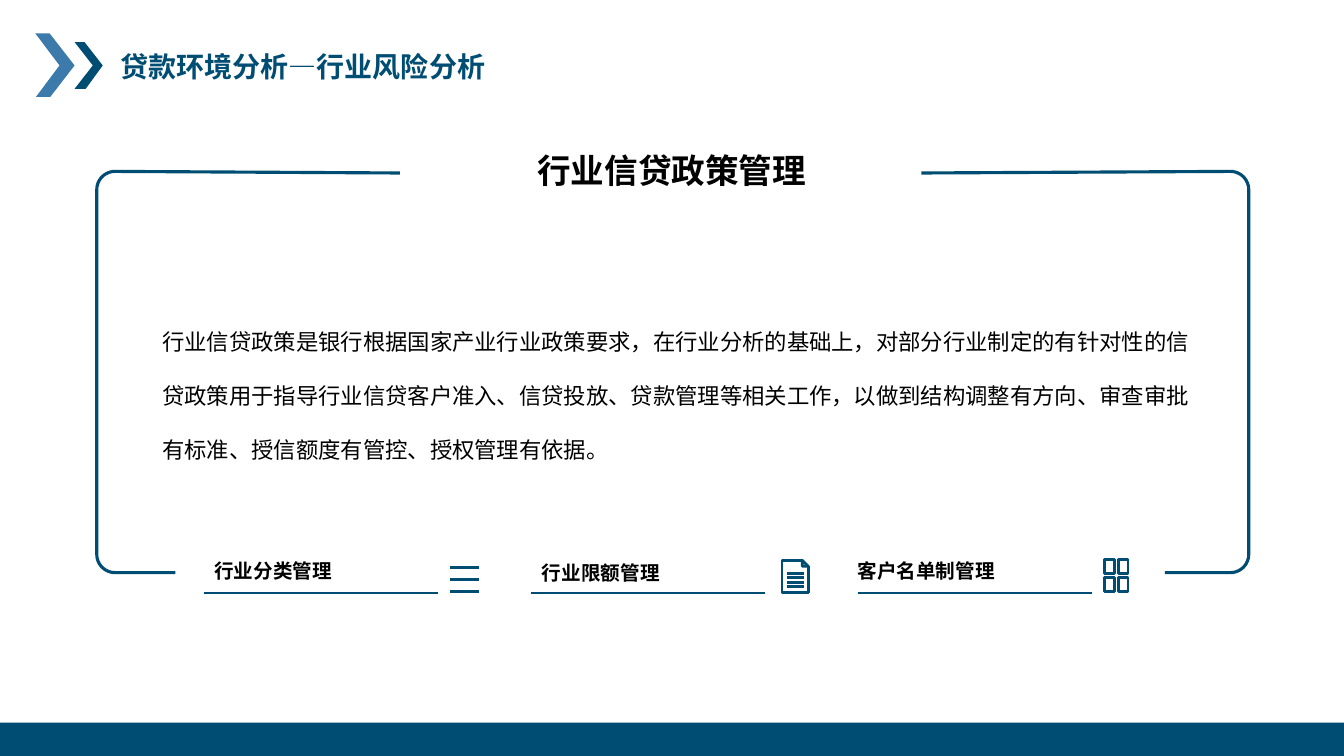
from math import cos, pi, sin

from lxml.etree import SubElement
from pptx import Presentation
from pptx.dml.color import RGBColor
from pptx.enum.shapes import MSO_CONNECTOR, MSO_SHAPE
from pptx.enum.text import PP_ALIGN
from pptx.oxml.ns import qn
from pptx.util import Cm, Pt

# Content
TITLE = "贷款环境分析—行业风险分析"
HEADING = "行业信贷政策管理"
BODY = ("行业信贷政策是银行根据国家产业行业政策要求，在行业分析的基础上，"
        "对部分行业制定的有针对性的信贷政策用于指导行业信贷客户准入、信贷投放、"
        "贷款管理等相关工作，以做到结构调整有方向、审查审批有标准、"
        "授信额度有管控、授权管理有依据。")
# Label, left, top, width, alignment
MEASURES = [
    ("行业分类管理", 5.13, 13.97, 3.51, PP_ALIGN.CENTER),
    ("行业限额管理", 13.39, 14.0, 3.51, PP_ALIGN.CENTER),
    ("客户名单制管理", 21.36, 13.97, 4.01, PP_ALIGN.LEFT),
]

# Style, lengths in cm
FONT = "Noto Sans CJK SC"
NAVY = RGBColor(0x00, 0x4D, 0x73)
BLUE = RGBColor(0x3C, 0x7A, 0xAB)
BLACK = RGBColor(0x00, 0x00, 0x00)
SLIDE_W, SLIDE_H, BAR_H = 33.87, 19.05, 0.84
CHEVRONS = [
    (BLUE, [(0.89, 0.84), (1.25, 0.84), (1.88, 1.65), (1.27, 2.44),
            (0.91, 2.44), (1.5, 1.65)]),
    (NAVY, [(1.88, 1.06), (2.13, 1.06), (2.59, 1.65), (2.16, 2.24),
            (1.88, 2.24), (2.34, 1.65)]),
]
FRAME_TOP, FRAME_BOTTOM, FRAME_R = 4.32, 14.43, 0.46
# Side x, direction inwards, end of bottom edge, end of top edge
FRAME_SIDES = [(2.44, 1, 4.42, 10.08), (31.47, -1, 29.36, 23.22)]
RULE_X, RULE_Y, RULE_W, RULE_PITCH = 5.13, 14.94, 5.9, 8.24

prs = Presentation()
prs.slide_width, prs.slide_height = Cm(SLIDE_W), Cm(SLIDE_H)
s = prs.slides.add_slide(prs.slide_layouts[6])


def paint(sp, fill=None, line=None, width=2):
    sp.shadow.inherit = False
    if fill is None:
        sp.fill.background()
    else:
        sp.fill.solid()
        sp.fill.fore_color.rgb = fill
    if line is None:
        sp.line.fill.background()
    else:
        sp.line.color.rgb = line
        sp.line.width = Pt(width)


def add_rect(x, y, w, h, **style):
    sp = s.shapes.add_shape(MSO_SHAPE.RECTANGLE, Cm(x), Cm(y), Cm(w), Cm(h))
    paint(sp, **style)


def add_path(points, close=False, **style):
    pts = [(Cm(x), Cm(y)) for x, y in points]
    fb = s.shapes.build_freeform(*pts[0])
    fb.add_line_segments(pts[1:], close=close)
    paint(fb.convert_to_shape(), **style)


def add_rule(x, y, w, width=2):
    ln = s.shapes.add_connector(MSO_CONNECTOR.STRAIGHT,
                                Cm(x), Cm(y), Cm(x + w), Cm(y))
    ln.line.color.rgb = NAVY
    ln.line.width = Pt(width)
    SubElement(ln._element.spPr, qn("a:effectLst"))


def add_text(text, x, y, w, h, size, color=BLACK, bold=True,
             align=PP_ALIGN.LEFT, wrap=True, spacing=None):
    tf = s.shapes.add_textbox(Cm(x), Cm(y), Cm(w), Cm(h)).text_frame
    tf.word_wrap = wrap
    tf.text = text
    p = tf.paragraphs[0]
    p.alignment, p.line_spacing = align, spacing
    font = p.runs[0].font
    font.name, font.size, font.bold = FONT, Pt(size), bold
    font.color.rgb = color
    SubElement(p.runs[0]._r.get_or_add_rPr(), qn("a:ea"), typeface=FONT)


def corner(side, inward, y, down, steps=12):
    """Points of a rounded corner, from the horizontal to the vertical edge."""
    cx, cy = side + inward * FRAME_R, y + down * FRAME_R
    angles = [i * pi / 2 / steps for i in range(steps + 1)]
    return [(cx - inward * FRAME_R * sin(a), cy - down * FRAME_R * cos(a))
            for a in angles]


# Title and footer bar
for color, points in CHEVRONS:
    add_path(points, close=True, fill=color)
add_text(TITLE, 2.79, 1.12, 12.55, 1.12, 20, NAVY)
add_rect(0, SLIDE_H - BAR_H, SLIDE_W, BAR_H, fill=NAVY)

# Open frame with its heading
for side, inward, bottom_end, top_end in FRAME_SIDES:
    add_path([(bottom_end, FRAME_BOTTOM)]
             + corner(side, inward, FRAME_BOTTOM, -1)
             + corner(side, inward, FRAME_TOP, 1)[::-1]
             + [(top_end, FRAME_TOP + 0.04)], line=NAVY, width=2.25)
add_text(HEADING, 13.26, 3.66, 7.34, 1.27, 24,
         align=PP_ALIGN.CENTER, wrap=False)

# Underlined measures
for i, (label, x, y, w, align) in enumerate(MEASURES):
    add_text(label, x, y, w, 0.86, 14, align=align, wrap=False)
    add_rule(RULE_X + i * RULE_PITCH, RULE_Y, RULE_W, width=1)

# Menu icon
for i in range(3):
    add_rule(11.35, 14.3 + i * 0.305, 0.71)

# Document icon
add_path([(20.37, 14.27), (20.37, 14.94), (19.71, 14.94), (19.71, 14.12),
          (20.22, 14.12)], line=NAVY)
add_path([(20.37, 14.27), (20.22, 14.12), (20.22, 14.27)],
         close=True, line=NAVY)
for i in range(4):
    add_rule(19.84, 14.45 + i * 0.11, 0.41)

# Grid icon
for row in range(2):
    for col in range(2):
        add_rect(27.84 + col * 0.34, 14.1 + row * 0.46, 0.25, 0.35, line=NAVY)

# Explanation
add_text(BODY, 3.84, 7.47, 26.77, 4.17, 16, bold=False, spacing=2.0)

prs.save("out.pptx")
